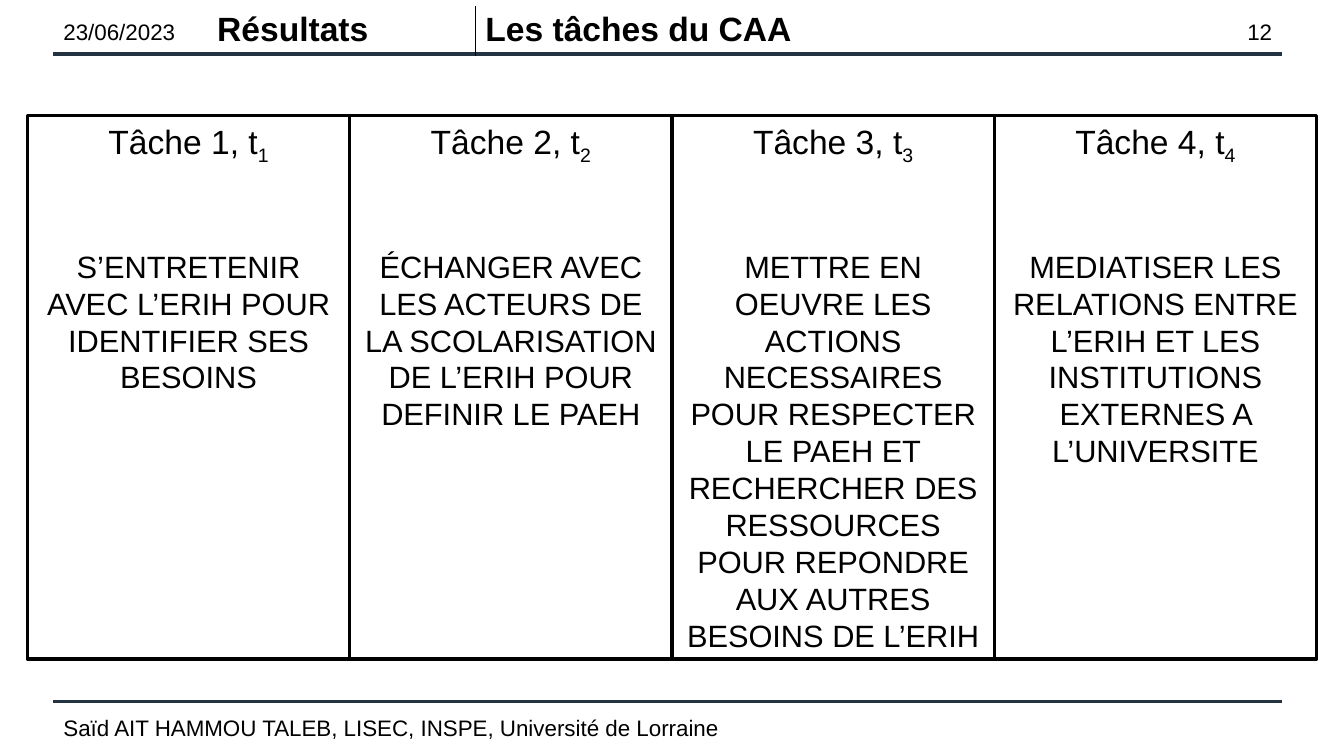
from dataclasses import dataclass

from lxml.etree import SubElement
from pptx import Presentation
from pptx.dml.color import RGBColor
from pptx.enum.shapes import MSO_CONNECTOR, MSO_SHAPE
from pptx.enum.text import MSO_ANCHOR, PP_ALIGN
from pptx.oxml.ns import qn
from pptx.util import Pt


@dataclass(frozen=True)
class Theme:
    font: str = "Arial"
    ink: RGBColor = RGBColor(0, 0, 0)
    rule: RGBColor = RGBColor(0x24, 0x33, 0x41)
    small: float = 16
    body: float = 22
    heading: float = 24
    outline: float = 2.25
    card_gap: float = 57.6


NO_GRID_STYLE = "{2D5ABB26-0587-4C30-8999-92F81FD0307C}"


class SlideBuilder:
    def __init__(self, slide, theme):
        self.slide = slide
        self.theme = theme

    def add_run(self, paragraph, text, size, bold=False, subscript=False):
        run = paragraph.add_run()
        run.text = text
        run.font.name = self.theme.font
        run.font.size = Pt(size)
        run.font.bold = bold
        run.font.color.rgb = self.theme.ink
        if subscript:
            run._r.get_or_add_rPr().set("baseline", "-25000")

    def add_rule(self, left, right, y):
        line = self.slide.shapes.add_connector(
            MSO_CONNECTOR.STRAIGHT, Pt(left), Pt(y), Pt(right), Pt(y))
        line.line.color.rgb = self.theme.rule
        line.line.width = Pt(self.theme.outline)
        SubElement(line._element.spPr, qn("a:effectLst"))

    def add_label(self, box, text, align=PP_ALIGN.LEFT):
        frame = self.slide.shapes.add_textbox(*map(Pt, box)).text_frame
        frame.word_wrap = True
        frame.vertical_anchor = MSO_ANCHOR.MIDDLE
        paragraph = frame.paragraphs[0]
        paragraph.alignment = align
        self.add_run(paragraph, text, self.theme.small)

    def add_header(self, left, top, widths, height, titles):
        """Add a one-row table whose cells are parted by thin vertical lines."""
        shape = self.slide.shapes.add_table(
            1, len(titles), Pt(left), Pt(top), Pt(sum(widths)), Pt(height))
        table = shape.table
        table.first_row = table.horz_banding = False
        table._tbl.tblPr.find(qn("a:tableStyleId")).text = NO_GRID_STYLE
        for index, (title, width) in enumerate(zip(titles, widths)):
            table.columns[index].width = Pt(width)
            cell = table.cell(0, index)
            if index > 0:
                self.add_cell_border(cell, "a:lnL")
            if index < len(titles) - 1:
                self.add_cell_border(cell, "a:lnR")
            cell.fill.background()
            self.add_run(cell.text_frame.paragraphs[0], title,
                         self.theme.heading, bold=True)

    def add_cell_border(self, cell, side):
        border = SubElement(cell._tc.get_or_add_tcPr(), qn(side), w=str(Pt(1)))
        fill = SubElement(border, qn("a:solidFill"))
        SubElement(fill, qn("a:srgbClr"), val=str(self.theme.ink))

    def add_task_card(self, box, number, task):
        shape = self.slide.shapes.add_shape(MSO_SHAPE.RECTANGLE, *map(Pt, box))
        shape.shadow.inherit = False
        shape.fill.background()
        shape.line.color.rgb = self.theme.ink
        shape.line.width = Pt(self.theme.outline)
        frame = shape.text_frame
        frame.word_wrap = True
        frame.vertical_anchor = MSO_ANCHOR.TOP
        heading, body = frame.paragraphs[0], frame.add_paragraph()
        heading.alignment = body.alignment = PP_ALIGN.CENTER
        self.add_run(heading, f"Tâche {number}, t", self.theme.heading)
        self.add_run(heading, str(number), self.theme.heading, subscript=True)
        body.space_before = Pt(self.theme.card_gap)
        self.add_run(body, task, self.theme.body)


TASKS = [
    "S’ENTRETENIR AVEC L’ERIH POUR IDENTIFIER SES BESOINS",
    "ÉCHANGER AVEC LES ACTEURS DE LA SCOLARISATION DE L’ERIH POUR DEFINIR LE PAEH",
    "METTRE EN OEUVRE LES ACTIONS NECESSAIRES POUR RESPECTER LE PAEH ET "
    "RECHERCHER DES RESSOURCES POUR REPONDRE AUX AUTRES BESOINS DE L’ERIH",
    "MEDIATISER LES RELATIONS ENTRE L’ERIH ET LES INSTITUTIONS EXTERNES A L’UNIVERSITE",
]


def main():
    presentation = Presentation()
    presentation.slide_width, presentation.slide_height = Pt(960), Pt(540)
    blank_layout = presentation.slide_layouts[6]
    builder = SlideBuilder(presentation.slides.add_slide(blank_layout), Theme())

    left, right = 38.2, 915.8
    for y in (38.6, 501.3):
        builder.add_rule(left, right, y)
    builder.add_label((left, 7.9, 216, 28.8), "23/06/2023")
    builder.add_label((left, 505.4, 827.3, 28.8),
                      "Saïd AIT HAMMOU TALEB, LISEC, INSPE, Université de Lorraine")
    builder.add_label((right - 50.4, 7.9, 50.4, 28.8), "12", PP_ALIGN.RIGHT)
    builder.add_header(147.9, 4.3, (191.6, 538.6), 29.5,
                       ("Résultats", "Les tâches du CAA"))

    card_left, card_width = 19.6, 230.2
    for index, task in enumerate(TASKS):
        box = (card_left + index * card_width, 82.8, card_width, 388)
        builder.add_task_card(box, index + 1, task)

    presentation.save("out.pptx")


if __name__ == "__main__":
    main()
